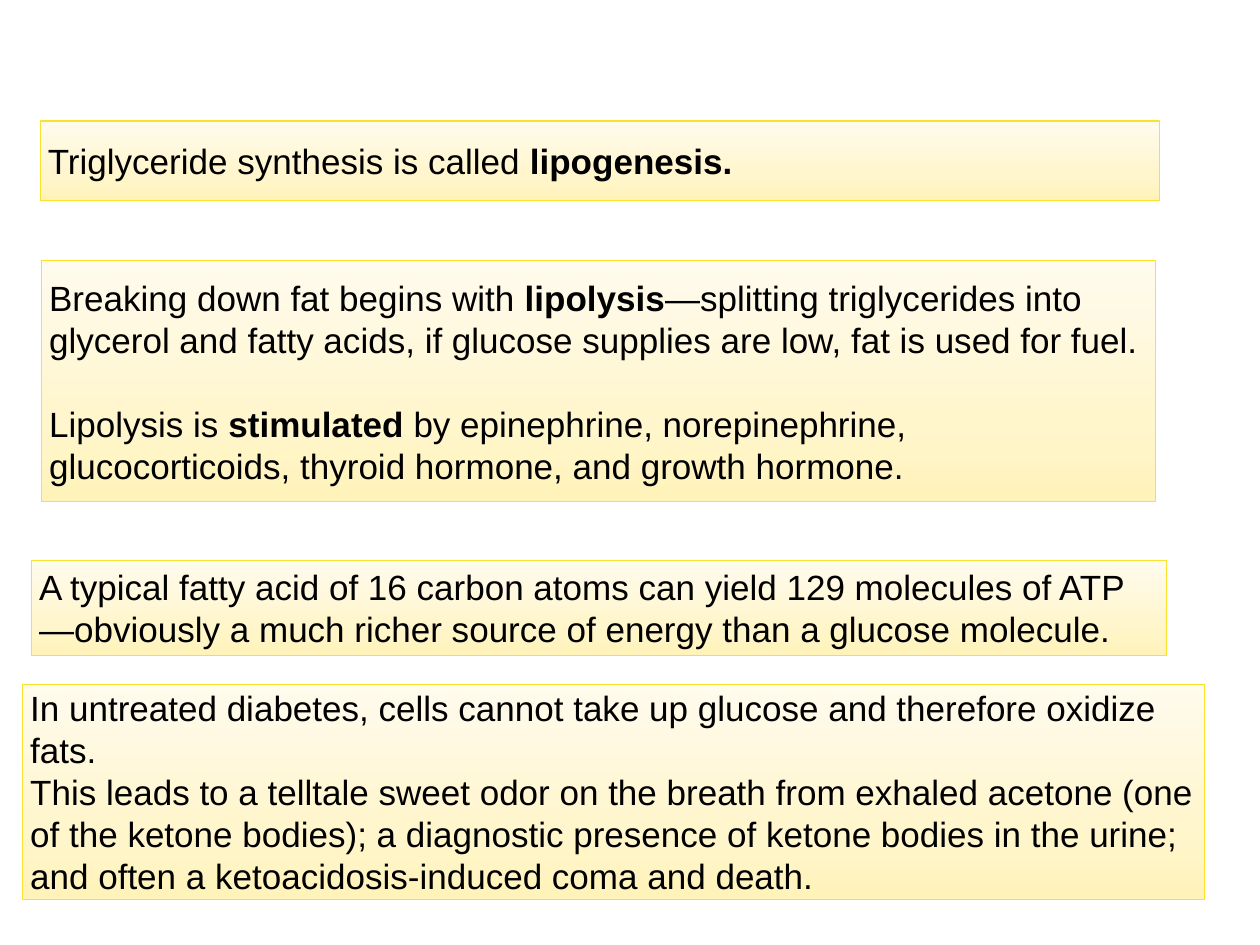
from copy import deepcopy

from pptx import Presentation
from pptx.dml.color import RGBColor
from pptx.enum.shapes import MSO_SHAPE
from pptx.enum.text import MSO_ANCHOR, MSO_AUTO_SIZE, PP_ALIGN
from pptx.oxml.ns import qn
from pptx.util import Inches, Pt

RECTANGLE = MSO_SHAPE.RECTANGLE
MIDDLE = MSO_ANCHOR.MIDDLE
GROW = MSO_AUTO_SIZE.SHAPE_TO_FIT_TEXT
LEFT = PP_ALIGN.LEFT

BLACK = RGBColor(0x00, 0x00, 0x00)
GOLD = RGBColor(0xF9, 0xE1, 0x2C)
CREAM_STOPS = [
    (0, RGBColor(0xFF, 0xF3, 0xBA)),
    (0.35, RGBColor(0xFF, 0xF6, 0xCE)),
    (1, RGBColor(0xFF, 0xFB, 0xED)),
]
FONT = "Arial"
TEXT_SIZE = Pt(20)
INSET = Inches(0.06)

# Each fact: (left, top, width, height), gap between paragraphs in points,
# and paragraphs of (text, bold) runs.
FACTS = [
    ((0.32, 0.96, 8.88, 0.63), 0, [
        [("Triglyceride synthesis is called ", False), ("lipogenesis.", True)],
    ]),
    ((0.33, 2.07, 8.84, 1.91), 24, [
        [("Breaking down fat begins with ", False), ("lipolysis", True),
         ("—splitting triglycerides into glycerol and fatty acids, "
          "if glucose supplies are low, fat is used for fuel.", False)],
        [("Lipolysis is ", False), ("stimulated ", True),
         ("by epinephrine, norepinephrine, glucocorticoids, "
          "thyroid hormone, and growth hormone.", False)],
    ]),
    ((0.25, 4.45, 9.01, 0.75), 0, [
        [("A typical fatty acid of 16 carbon atoms can yield 129 molecules of "
          "ATP—obviously a much richer source of energy than a glucose "
          "molecule.", False)],
    ]),
    ((0.18, 5.43, 9.38, 1.71), 0, [
        [("In untreated diabetes, cells cannot take up glucose and therefore "
          "oxidize fats.", False)],
        [("This leads to a telltale sweet odor on the breath from exhaled "
          "acetone (one of the ketone bodies); a diagnostic presence of ketone "
          "bodies in the urine; and often a ketoacidosis-induced coma and "
          "death.", False)],
    ]),
]


def fill_cream(box):
    """Fade the box from deep cream at the bottom to pale at the top."""
    box.fill.gradient()
    box.fill.gradient_angle = 90
    stop_list = box._element.spPr.find(qn("a:gradFill")).find(qn("a:gsLst"))
    stop_list.append(deepcopy(stop_list[-1]))
    for stop, (position, color) in zip(box.fill.gradient_stops, CREAM_STOPS):
        stop.position = position
        stop.color.rgb = color


def add_paragraph_runs(paragraph, runs):
    paragraph.alignment = LEFT
    for text, bold in runs:
        run = paragraph.add_run()
        run.text = text
        run.font.name = FONT
        run.font.size = TEXT_SIZE
        run.font.bold = bold
        run.font.color.rgb = BLACK


def add_fact_box(slide, bounds, gap, paragraphs):
    box = slide.shapes.add_shape(RECTANGLE, *map(Inches, bounds))
    box.shadow.inherit = False
    fill_cream(box)
    box.line.color.rgb = GOLD
    box.line.width = Pt(0.75)

    frame = box.text_frame
    frame.word_wrap = True
    frame.auto_size = GROW
    frame.vertical_anchor = MIDDLE
    frame.margin_left = frame.margin_right = INSET
    frame.margin_top = frame.margin_bottom = INSET
    for index, runs in enumerate(paragraphs):
        paragraph = frame.add_paragraph() if index else frame.paragraphs[0]
        if index:
            paragraph.space_before = Pt(gap)
        add_paragraph_runs(paragraph, runs)


def main():
    deck = Presentation()
    deck.slide_width = Inches(10)
    deck.slide_height = Inches(7.5)
    slide = deck.slides.add_slide(deck.slide_layouts[6])
    for bounds, gap, paragraphs in FACTS:
        add_fact_box(slide, bounds, gap, paragraphs)
    deck.save("out.pptx")


if __name__ == "__main__":
    main()
